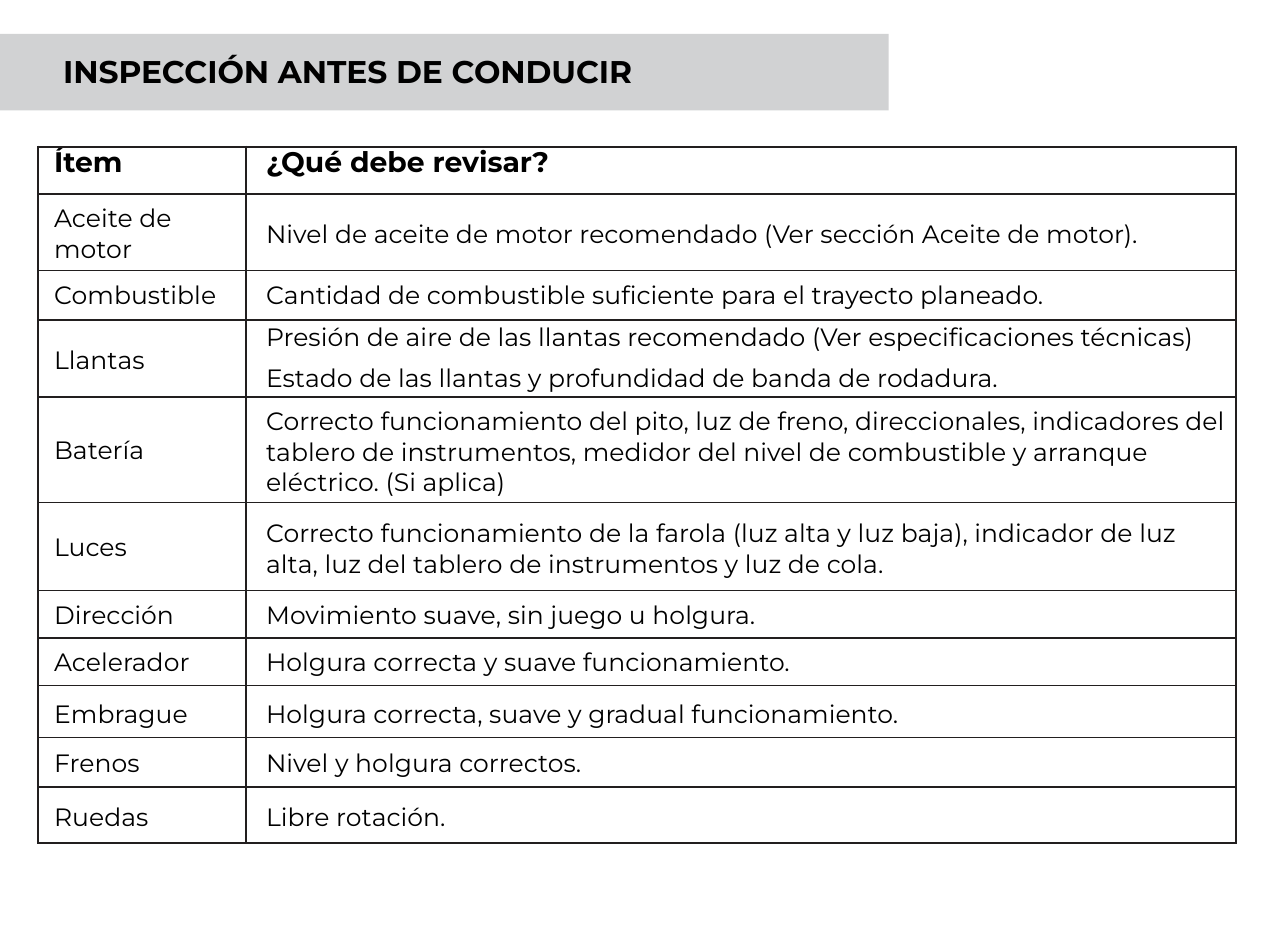
from lxml import etree
from pptx import Presentation
from pptx.dml.color import RGBColor
from pptx.enum import shapes, text
from pptx.oxml.ns import qn
from pptx.util import Inches, Pt

FONT = "Montserrat"
BLACK, BORDER, BAND = "000000", "221F1F", "D1D2D3"
COLUMN_WIDTHS = (0.92, 4.39)
INDENTS = (0.07, 0.09)
HEADINGS = ("Ítem", "¿Qué debe revisar?")

# Row height, item, its top inset, checks, their top inset
INSPECTIONS = [
    (0.34, "Aceite de motor", 0.04,
     ["Nivel de aceite de motor recomendado (Ver sección Aceite de motor)."], 0.11),
    (0.22, "Combustible", 0.04,
     ["Cantidad de combustible suficiente para el trayecto planeado."], 0.04),
    (0.34, "Llantas", 0.11,
     ["Presión de aire de las llantas recomendado (Ver especificaciones técnicas)",
      "Estado de las llantas y profundidad de banda de rodadura."], 0.01),
    (0.47, "Batería", 0.17,
     ["Correcto funcionamiento del pito, luz de freno, direccionales, indicadores del "
      "tablero de instrumentos, medidor del nivel de combustible y arranque "
      "eléctrico. (Si aplica)"], 0.04),
    (0.39, "Luces", 0.13,
     ["Correcto funcionamiento de la farola (luz alta y luz baja), indicador de luz "
      "alta, luz del tablero de instrumentos y luz de cola."], 0.07),
    (0.21, "Dirección", 0.04, ["Movimiento suave, sin juego u holgura."], 0.04),
    (0.21, "Acelerador", 0.04, ["Holgura correcta y suave funcionamiento."], 0.04),
    (0.23, "Embrague", 0.06, ["Holgura correcta, suave y gradual funcionamiento."], 0.06),
    (0.22, "Frenos", 0.05, ["Nivel y holgura correctos."], 0.05),
    (0.25, "Ruedas", 0.07, ["Libre rotación."], 0.07),
]


def color(hex_value):
    return RGBColor.from_string(hex_value)


def style_paragraph(paragraph, size, bold=False):
    paragraph.alignment = text.PP_ALIGN.LEFT
    font = paragraph.font
    font.name, font.size, font.bold = FONT, Pt(size), bold
    font.color.rgb = color(BLACK)


def add_title(slide, wording):
    # Grey band, placed behind the title
    band = slide.shapes.add_shape(shapes.MSO_SHAPE.RECTANGLE, 0, Inches(0.15),
                                  Inches(3.94), Inches(0.34))
    band.shadow.inherit = False
    band.fill.solid()
    band.fill.fore_color.rgb = color(BAND)
    band.line.fill.background()

    title = slide.shapes.title
    band.element.addnext(title.element)
    title.left, title.top = Inches(0.27), Inches(0.22)
    title.width, title.height = Inches(2.6), Inches(0.19)
    frame = title.text_frame
    frame.text = wording
    frame.margin_left, frame.margin_top = Inches(0.01), Inches(0.01)
    frame.margin_right = frame.margin_bottom = 0
    frame.vertical_anchor = text.MSO_ANCHOR.TOP
    frame.auto_size = text.MSO_AUTO_SIZE.NONE
    frame.word_wrap = False
    style_paragraph(frame.paragraphs[0], 10, bold=True)


def set_borders(cell, top, bottom):
    properties = cell._tc.get_or_add_tcPr()
    for side, width in (("L", 0.75), ("R", 0.75), ("T", top), ("B", bottom)):
        line = etree.SubElement(properties, qn(f"a:ln{side}"), w=str(Pt(width)))
        fill = etree.SubElement(line, qn("a:solidFill"))
        etree.SubElement(fill, qn("a:srgbClr"), val=BORDER)


def fill_cell(cell, lines, indent, inset, size=8, bold=False):
    cell.fill.background()
    cell.vertical_anchor = text.MSO_ANCHOR.TOP
    cell.margin_left, cell.margin_top = Inches(indent), Inches(inset)
    cell.margin_right, cell.margin_bottom = Inches(0.03), 0
    cell.text_frame.text = "\n".join(lines)
    for paragraph in cell.text_frame.paragraphs:
        style_paragraph(paragraph, size, bold)
    for later in cell.text_frame.paragraphs[1:]:
        later.space_before, later.line_spacing = Pt(4), Pt(8.9)


def add_inspection_table(slide):
    heights = [0.21] + [row[0] for row in INSPECTIONS]
    table = slide.shapes.add_table(
        len(heights), len(COLUMN_WIDTHS), Inches(0.17), Inches(0.65),
        Inches(sum(COLUMN_WIDTHS)), Inches(sum(heights))).table
    table.first_row = table.horz_banding = False
    for column, width in zip(table.columns, COLUMN_WIDTHS):
        column.width = Inches(width)

    # Outer and heading rules are heavier than the inner ones
    last = len(heights) - 1
    for index, height in enumerate(heights):
        table.rows[index].height = Inches(height)
        for cell in table.rows[index].cells:
            set_borders(cell, 0.75 if index <= 1 else 0.5,
                        0.75 if index in (0, last) else 0.5)

    # Headings
    for cell, heading, indent in zip(table.rows[0].cells, HEADINGS, INDENTS):
        fill_cell(cell, [heading], indent, 0, size=9, bold=True)
        cell.text_frame.paragraphs[0].line_spacing = Pt(10.6)

    # Items and their checks
    for index, (_, item, item_inset, checks, check_inset) in enumerate(INSPECTIONS, 1):
        fill_cell(table.cell(index, 0), [item], INDENTS[0], item_inset)
        fill_cell(table.cell(index, 1), checks, INDENTS[1], check_inset)


def main():
    presentation = Presentation()
    presentation.slide_width = Inches(5.71)
    presentation.slide_height = Inches(4.14)
    slide = presentation.slides.add_slide(presentation.slide_layouts[5])
    add_title(slide, "INSPECCIÓN ANTES DE CONDUCIR")
    add_inspection_table(slide)
    presentation.save("out.pptx")


if __name__ == "__main__":
    main()
